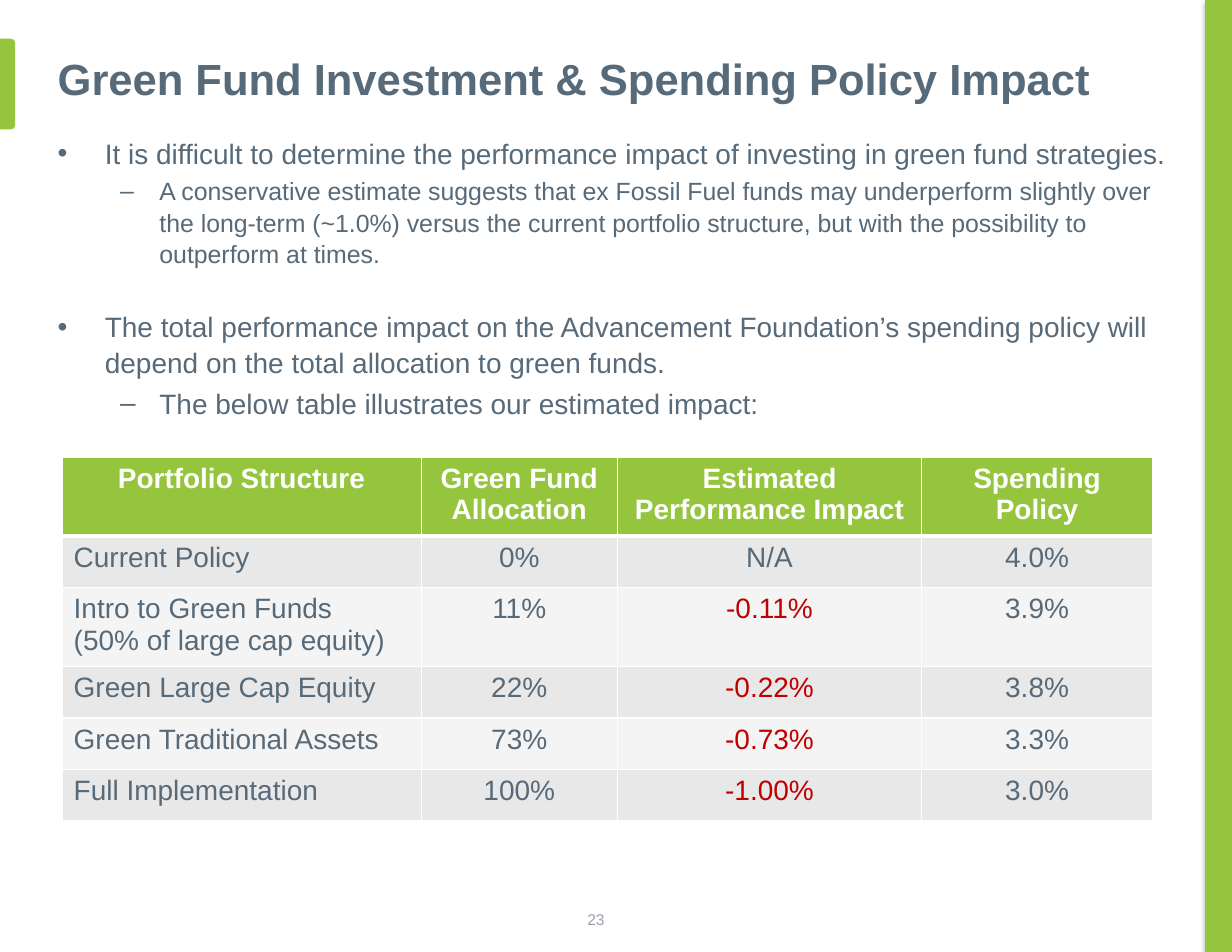
import pptx
import pptx.dml.color
import pptx.enum.shapes
import pptx.enum.text
import pptx.oxml
import pptx.oxml.ns
import pptx.util

Pt = pptx.util.Pt
RGBColor = pptx.dml.color.RGBColor
ALIGN = pptx.enum.text.PP_ALIGN
ANCHOR = pptx.enum.text.MSO_ANCHOR
SHAPE = pptx.enum.shapes.MSO_SHAPE

GREEN = RGBColor(0x95, 0xC4, 0x3D)
SLATE = RGBColor(0x57, 0x6A, 0x79)
RED = RGBColor(0xC0, 0x00, 0x00)
WHITE = RGBColor(0xFF, 0xFF, 0xFF)
NUMBER_GRAY = RGBColor(0x9A, 0xA1, 0xA8)
BAND_DARK = RGBColor(0xE8, 0xE8, 0xE8)
BAND_LIGHT = RGBColor(0xF4, 0xF4, 0xF4)

FONT = "Arial"
INSET_X, INSET_Y = 7.6, 3.8
CONTENT_LEFT, CONTENT_WIDTH = 29.5, 734.4

# Level, size, space before, text
BULLETS = [
    (0, 18, 0, "It is difficult to determine the performance impact of investing "
               "in green fund strategies."),
    (1, 16, 3, "A conservative estimate suggests that ex Fossil Fuel funds may "
               "underperform slightly over the long-term (~1.0%) versus the current "
               "portfolio structure, but with the possibility to outperform at times."),
    (0, 18, 25.5, "The total performance impact on the Advancement Foundation’s "
                  "spending policy will depend on the total allocation to green funds."),
    (1, 18, 3.6, "The below table illustrates our estimated impact:"),
]
# Bullet character, text margin, hanging indent for each level
LEVELS = [("•", 30.3, 30.3), ("–", 65.4, 25.2)]

COLUMN_WIDTHS = [231, 126, 195.8, 148.2]
ROW_HEIGHT, TALL_ROW_HEIGHT = 33.1, 48
TABLE_ROWS = [
    ["Portfolio Structure", "Green Fund Allocation",
     "Estimated Performance Impact", "Spending Policy"],
    ["Current Policy", "0%", "N/A", "4.0%"],
    ["Intro to Green Funds\n(50% of large cap equity)", "11%", "-0.11%", "3.9%"],
    ["Green Large Cap Equity", "22%", "-0.22%", "3.8%"],
    ["Green Traditional Assets", "73%", "-0.73%", "3.3%"],
    ["Full Implementation", "100%", "-1.00%", "3.0%"],
]


def add_run(paragraph, text, size, color, bold=False):
    run = paragraph.add_run()
    run.text = text
    run.font.name = FONT
    run.font.size = Pt(size)
    run.font.bold = bold
    run.font.color.rgb = color


def set_margins(target):
    """Apply the common insets to a text frame or a table cell."""
    target.margin_left = target.margin_right = Pt(INSET_X)
    target.margin_top = target.margin_bottom = Pt(INSET_Y)


def add_text_box(slide, left, top, width, height):
    text_frame = slide.shapes.add_textbox(
        Pt(left), Pt(top), Pt(width), Pt(height)).text_frame
    text_frame.word_wrap = True
    set_margins(text_frame)
    return text_frame


def add_green_shape(slide, kind, left, top, width, height):
    shape = slide.shapes.add_shape(kind, Pt(left), Pt(top), Pt(width), Pt(height))
    shape.shadow.inherit = False
    shape.fill.solid()
    shape.fill.fore_color.rgb = GREEN
    shape.line.fill.background()
    return shape


def add_soft_shadow(shape):
    effects = shape._element.spPr.find(pptx.oxml.ns.qn("a:effectLst"))
    effects.append(pptx.oxml.parse_xml(
        f'<a:outerShdw {pptx.oxml.ns.nsdecls("a")} blurRad="{Pt(3.1)}" '
        f'dist="{Pt(1.8)}" dir="5400000" rotWithShape="0">'
        '<a:srgbClr val="000000"><a:alpha val="35000"/></a:srgbClr></a:outerShdw>'))


def add_decoration(slide):
    bar = add_green_shape(slide, SHAPE.RECTANGLE, 774.9, 0, 16.6, 612)
    bar.line.color.rgb = GREEN
    bar.line.width = Pt(0.75)
    add_soft_shadow(bar)
    tab = add_green_shape(slide, SHAPE.ROUND_2_SAME_RECTANGLE, -24.5, 49, 58.4, 10.1)
    tab.rotation = 90
    tab.adjustments[0] = 0.305
    tab.adjustments[1] = 0


def format_title(slide, text):
    title = slide.shapes.title
    title.left, title.top = Pt(CONTENT_LEFT), Pt(24.5)
    title.width, title.height = Pt(CONTENT_WIDTH), Pt(51.8)
    text_frame = title.text_frame
    set_margins(text_frame)
    text_frame.auto_size = pptx.enum.text.MSO_AUTO_SIZE.NONE
    text_frame.vertical_anchor = ANCHOR.MIDDLE
    paragraph = text_frame.paragraphs[0]
    paragraph.alignment = ALIGN.LEFT
    add_run(paragraph, text, 28, SLATE, bold=True)


def set_bullet(paragraph, level):
    character, margin, hanging = LEVELS[level]
    properties = paragraph._p.get_or_add_pPr()
    properties.set("marL", str(Pt(margin)))
    properties.set("indent", str(-Pt(hanging)))
    namespace = pptx.oxml.ns.nsdecls("a")
    properties.append(pptx.oxml.parse_xml(f'<a:buFont {namespace} typeface="{FONT}"/>'))
    properties.append(pptx.oxml.parse_xml(f'<a:buChar {namespace} char="{character}"/>'))


def add_bullets(slide):
    text_frame = add_text_box(slide, CONTENT_LEFT, 82.8, CONTENT_WIDTH, 170.6)
    for index, (level, size, space_before, text) in enumerate(BULLETS):
        paragraph = text_frame.add_paragraph() if index else text_frame.paragraphs[0]
        paragraph.level = level
        set_bullet(paragraph, level)
        paragraph.line_spacing = 1.05
        paragraph.space_before = Pt(space_before)
        add_run(paragraph, text, size, SLATE)


def set_borders(cell, row_index):
    """Draw white cell borders, with a heavier rule under the header row."""
    widths = {"L": 1, "R": 1, "T": 3 if row_index == 1 else 1,
              "B": 3 if row_index == 0 else 1}
    properties = cell._tc.get_or_add_tcPr()
    for side, width in widths.items():
        properties.append(pptx.oxml.parse_xml(
            f'<a:ln{side} {pptx.oxml.ns.nsdecls("a")} w="{Pt(width)}">'
            f'<a:solidFill><a:srgbClr val="{WHITE}"/></a:solidFill></a:ln{side}>'))


def fill_cell(cell, text, row_index, column_index):
    is_header = row_index == 0
    set_margins(cell)
    set_borders(cell, row_index)
    cell.fill.solid()
    band = BAND_DARK if row_index % 2 else BAND_LIGHT
    cell.fill.fore_color.rgb = GREEN if is_header else band
    color = WHITE if is_header else RED if text.startswith("-") else SLATE
    centered = is_header or column_index > 0
    for index, line in enumerate(text.split("\n")):
        text_frame = cell.text_frame
        paragraph = text_frame.add_paragraph() if index else text_frame.paragraphs[0]
        paragraph.alignment = ALIGN.CENTER if centered else ALIGN.LEFT
        add_run(paragraph, line, 18, color, bold=is_header)


def add_impact_table(slide):
    heights = [TALL_ROW_HEIGHT if index == 0 or "\n" in row[0] else ROW_HEIGHT
               for index, row in enumerate(TABLE_ROWS)]
    table = slide.shapes.add_table(
        len(TABLE_ROWS), len(COLUMN_WIDTHS), Pt(39.8), Pt(293.8),
        Pt(sum(COLUMN_WIDTHS)), Pt(sum(heights))).table
    for column, width in zip(table.columns, COLUMN_WIDTHS):
        column.width = Pt(width)
    for row_index, texts in enumerate(TABLE_ROWS):
        table.rows[row_index].height = Pt(heights[row_index])
        for column_index, text in enumerate(texts):
            fill_cell(table.cell(row_index, column_index), text, row_index, column_index)


def add_slide_number(slide, number):
    paragraph = add_text_box(slide, 203.8, 581, 358.6, 20.9).paragraphs[0]
    paragraph.alignment = ALIGN.CENTER
    add_run(paragraph, number, 10, NUMBER_GRAY)


def main():
    presentation = pptx.Presentation()
    presentation.slide_width, presentation.slide_height = Pt(792), Pt(612)
    slide = presentation.slides.add_slide(presentation.slide_layouts[5])
    add_decoration(slide)
    format_title(slide, "Green Fund Investment & Spending Policy Impact")
    add_bullets(slide)
    add_impact_table(slide)
    add_slide_number(slide, "23")
    presentation.save("out.pptx")


if __name__ == "__main__":
    main()
